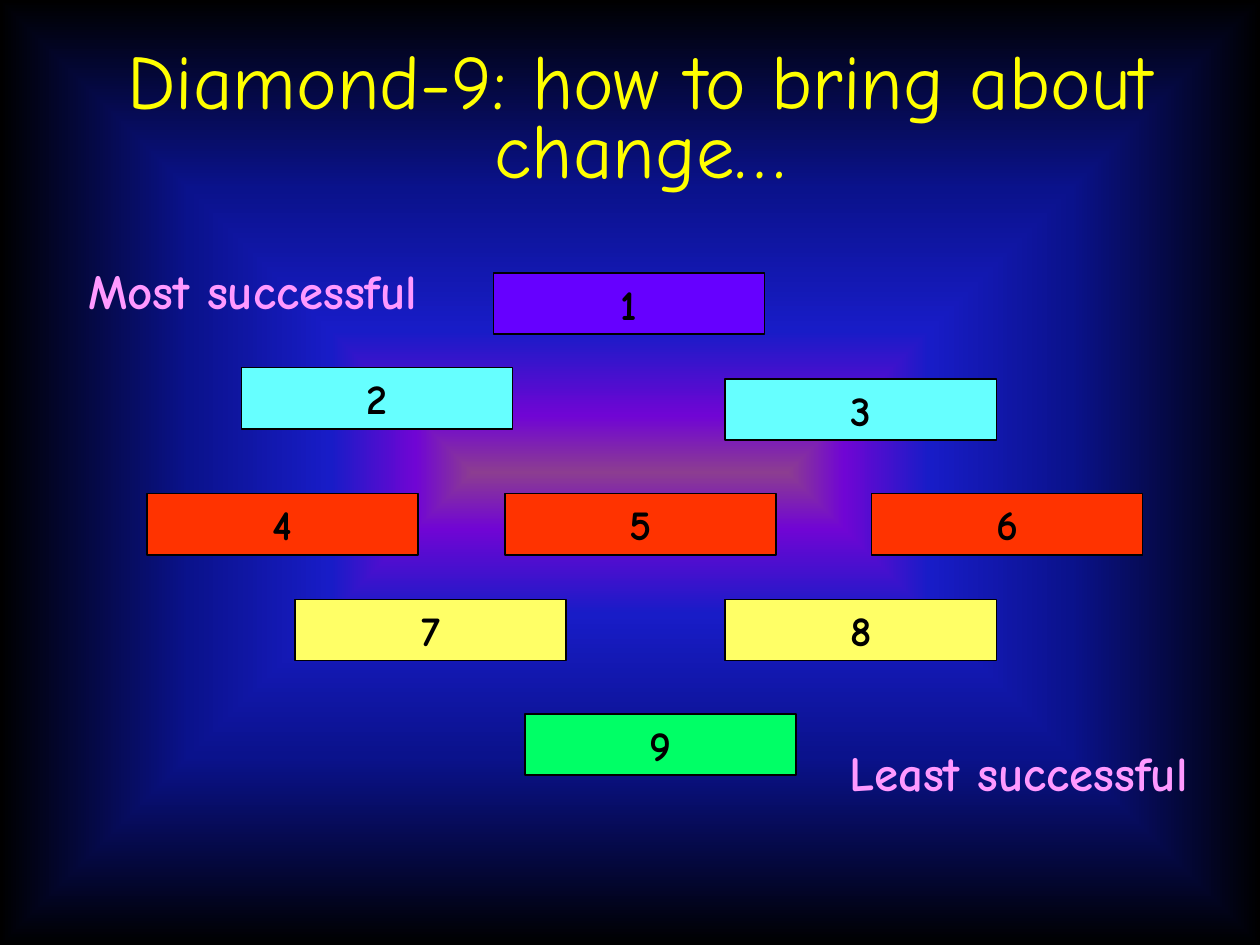
from pptx import Presentation
from pptx.dml.color import RGBColor
from pptx.enum import shapes, text
from pptx.oxml import parse_xml
from pptx.oxml.ns import nsdecls
from pptx.util import Pt

FONT = "Comic Neue"
BLACK = RGBColor(0x00, 0x00, 0x00)
YELLOW = RGBColor(0xFF, 0xFF, 0x00)
PINK = RGBColor(0xFF, 0x99, 0xFF)
VIOLET = RGBColor(0x66, 0x00, 0xFF)
CYAN = RGBColor(0x66, 0xFF, 0xFF)
RED = RGBColor(0xFF, 0x33, 0x00)
LEMON = RGBColor(0xFF, 0xFF, 0x66)
GREEN = RGBColor(0x00, 0xFF, 0x66)

GLOW = [
    (0, RGBColor(0x8C, 0x3D, 0x91)),
    (12, RGBColor(0x70, 0x05, 0xD4)),
    (30, RGBColor(0x18, 0x1C, 0xC7)),
    (60, RGBColor(0x0A, 0x12, 0x8C)),
    (100, BLACK),
]

HEADING = "Diamond-9: how to bring about change…"
DIAMOND = [
    (VIOLET, [(282, 156)]),
    (CYAN, [(138, 210), (414.5, 216.5)]),
    (RED, [(84, 282), (288.5, 282), (498, 282)]),
    (LEMON, [(168.5, 342.5), (414.5, 342.5)]),
    (GREEN, [(300, 408)]),
]
CARD_WIDTH, CARD_HEIGHT = 155, 35
SCALE_ENDS = [
    ("Most successful", 29, 145.5, 231),
    ("Least successful", 463, 421, 238),
]


def write(frame, words, size, color, bold=None):
    paragraph = frame.paragraphs[0]
    paragraph.alignment = text.PP_ALIGN.CENTER
    run = paragraph.add_run()
    run.text = words
    run.font.name = FONT
    run.font.size = Pt(size)
    run.font.bold = bold
    run.font.color.rgb = color
    return paragraph


def paint_background(slide):
    stops = "".join(
        f'<a:gs pos="{position * 1000}"><a:srgbClr val="{color}"/></a:gs>'
        for position, color in GLOW
    )
    background = parse_xml(
        f'<p:bg {nsdecls("p", "a")}><p:bgPr><a:gradFill rotWithShape="0">'
        f'<a:gsLst>{stops}</a:gsLst><a:path path="shape">'
        '<a:fillToRect l="50000" t="50000" r="50000" b="50000"/></a:path>'
        '</a:gradFill><a:effectLst/></p:bgPr></p:bg>'
    )
    slide.element.cSld.insert(0, background)


def add_heading(slide):
    heading = slide.shapes.title
    heading.left, heading.top = Pt(12), Pt(27.5)
    heading.width, heading.height = Pt(708), Pt(86)
    frame = heading.text_frame
    frame.auto_size = text.MSO_AUTO_SIZE.NONE
    frame.vertical_anchor = text.MSO_ANCHOR.MIDDLE
    write(frame, HEADING, 44, YELLOW).line_spacing = 0.75


def add_card(slide, rank, left, top, color):
    card = slide.shapes.add_shape(
        shapes.MSO_SHAPE.RECTANGLE,
        Pt(left), Pt(top), Pt(CARD_WIDTH), Pt(CARD_HEIGHT),
    )
    card.shadow.inherit = False
    card.fill.solid()
    card.fill.fore_color.rgb = color
    card.line.color.rgb = BLACK
    card.line.width = Pt(1)
    card.text_frame.word_wrap = False
    card.text_frame.vertical_anchor = text.MSO_ANCHOR.MIDDLE
    write(card.text_frame, str(rank), 24, BLACK, True)


def add_scale_end(slide, words, left, top, width):
    label = slide.shapes.add_textbox(Pt(left), Pt(top), Pt(width), Pt(41))
    label.text_frame.word_wrap = False
    label.text_frame.auto_size = text.MSO_AUTO_SIZE.SHAPE_TO_FIT_TEXT
    write(label.text_frame, words, 28, PINK, True)


def main():
    deck = Presentation()
    deck.slide_width, deck.slide_height = Pt(720), Pt(540)
    slide = deck.slides.add_slide(deck.slide_layouts[5])
    paint_background(slide)
    add_heading(slide)
    cards = [(*place, color) for color, row in DIAMOND for place in row]
    for rank, card in enumerate(cards, start=1):
        add_card(slide, rank, *card)
    for scale_end in SCALE_ENDS:
        add_scale_end(slide, *scale_end)
    deck.save("out.pptx")


if __name__ == "__main__":
    main()
